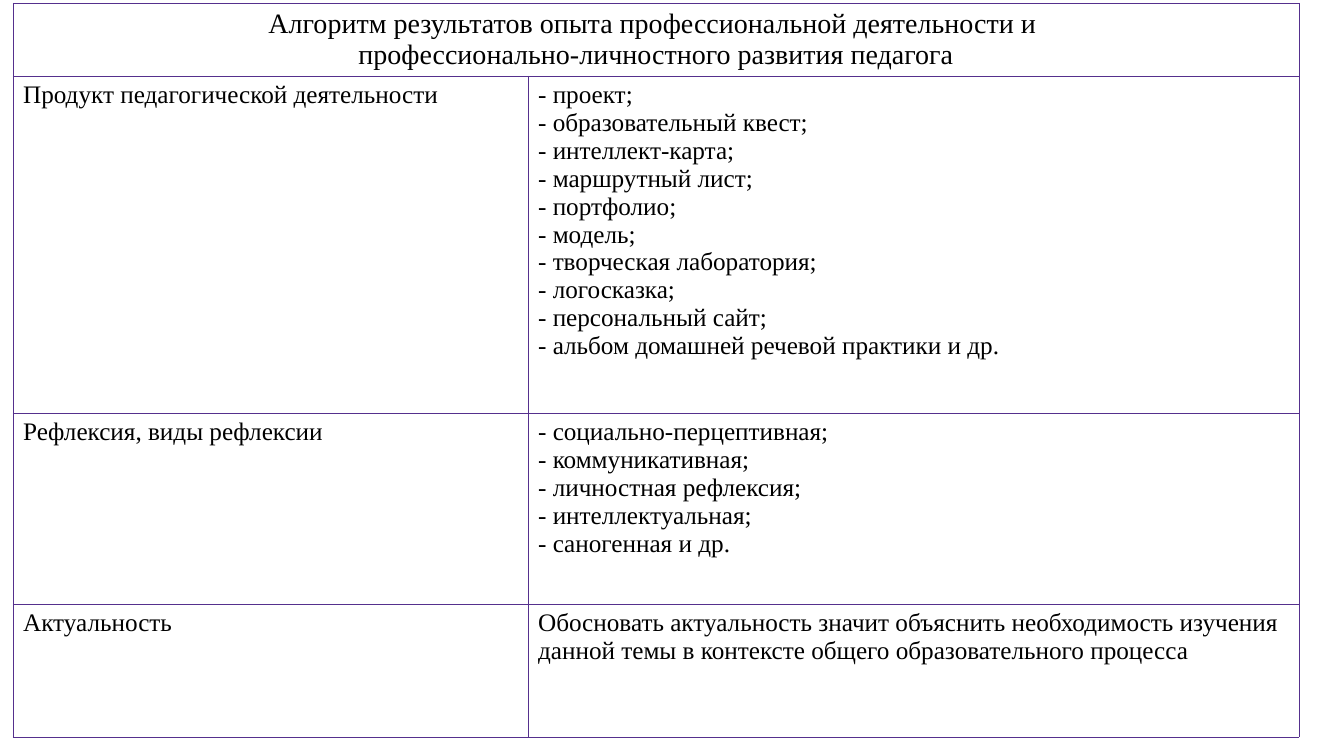
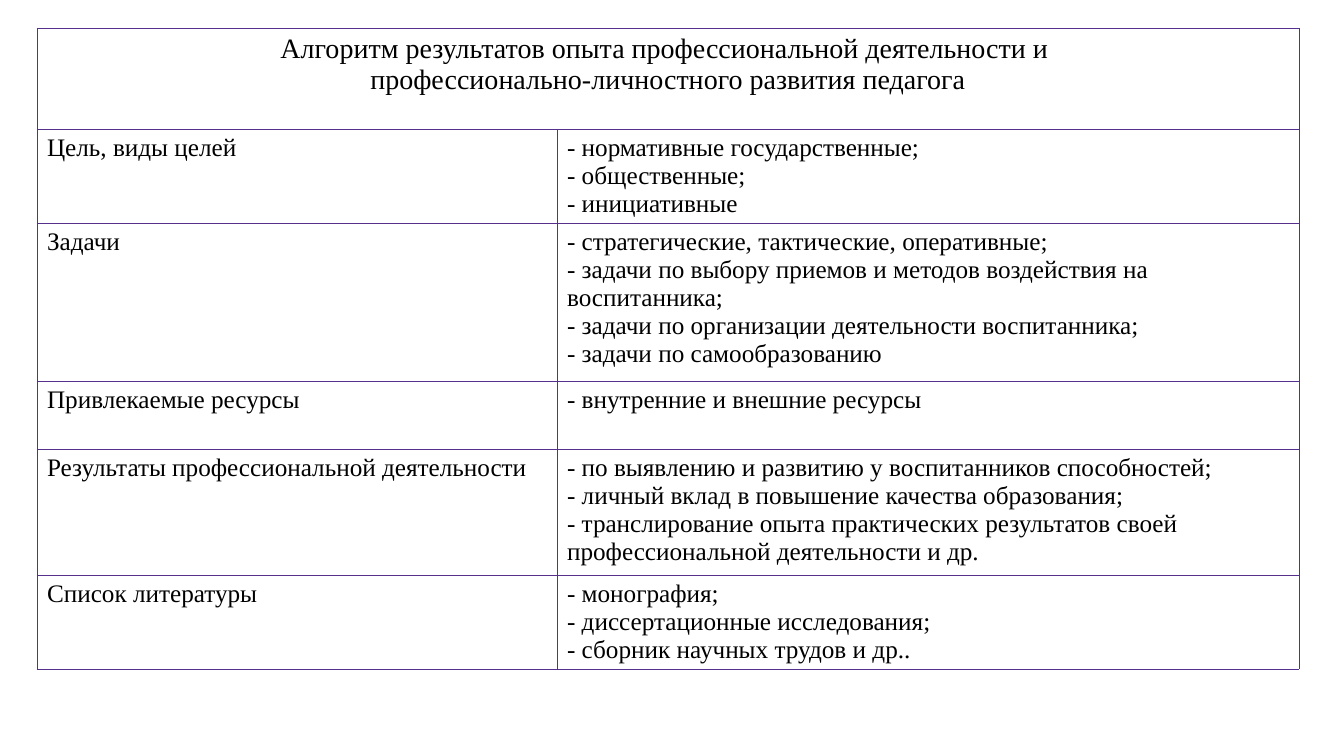
from lxml.etree import SubElement
from pptx import Presentation
from pptx.dml.color import RGBColor
from pptx.enum.text import PP_ALIGN
from pptx.oxml.ns import qn
from pptx.util import Emu, Pt

# Shared style
BLACK = RGBColor(0x00, 0x00, 0x00)
WHITE = RGBColor(0xFF, 0xFF, 0xFF)
PURPLE = RGBColor(0x55, 0x30, 0x8D)
FONT = "Times New Roman"
HEAD_SIZE, BODY_SIZE = Pt(20), Pt(18)
EDGE = Pt(0.06)
SCALE = 914400 / 100.8

# Content: each row is (height, label, lines)
HEAD = [
    "Алгоритм результатов опыта профессиональной деятельности и ",
    "профессионально-личностного развития педагога",
]
PAGES = [
    {
        "at": (13, 3), "cols": (515, 771), "head": 73,
        "rows": [
            (337, "Продукт педагогической деятельности", [
                "- проект;",
                "- образовательный квест;",
                "- интеллект-карта;",
                "- маршрутный лист;",
                "- портфолио;",
                "- модель;",
                "- творческая лаборатория;",
                "- логосказка;",
                "- персональный сайт;",
                "- альбом домашней речевой практики и др.",
            ]),
            (191, "Рефлексия, виды рефлексии", [
                "- социально-перцептивная;",
                "- коммуникативная;",
                "- личностная рефлексия;",
                "- интеллектуальная;",
                "- саногенная и др.",
            ]),
            (133, "Актуальность", [
                "Обосновать актуальность значит объяснить необходимость изучения "
                "данной темы в контексте общего образовательного процесса",
            ]),
        ],
    },
    {
        "at": (37, 28), "cols": (520, 742), "head": 101,
        "rows": [
            (94, "Цель, виды целей", [
                "- нормативные государственные;",
                "- общественные;",
                "- инициативные",
            ]),
            (158, "Задачи", [
                "- стратегические, тактические, оперативные;",
                "- задачи по выбору приемов и методов воздействия на воспитанника;",
                "- задачи по организации деятельности воспитанника;",
                "- задачи по самообразованию",
            ]),
            (68, "Привлекаемые ресурсы", ["- внутренние и внешние ресурсы"]),
            (126, "Результаты профессиональной деятельности", [
                "- по выявлению и развитию у воспитанников способностей;",
                "- личный вклад в повышение качества образования;",
                "- транслирование опыта практических результатов своей "
                "профессиональной деятельности и др.",
            ]),
            (94, "Список литературы", [
                "- монография;",
                "- диссертационные исследования;",
                "- сборник научных трудов и др..",
            ]),
        ],
    },
]


def px(n):
    return Emu(round(n * SCALE))


def frame(cell):
    """Draw the four cell borders; they must precede the fill in the XML."""
    props = cell._tc.get_or_add_tcPr()
    for side in ("lnL", "lnR", "lnT", "lnB"):
        line = SubElement(props, qn(f"a:{side}"), w=str(int(EDGE)))
        fill = SubElement(line, qn("a:solidFill"))
        SubElement(fill, qn("a:srgbClr"), val=str(PURPLE))


def write(cell, lines, size, align):
    cell.text_frame.text = "\n".join(lines)
    for para in cell.text_frame.paragraphs:
        para.alignment = align
        for run in para.runs:
            run.font.name = FONT
            run.font.size = size
            run.font.color.rgb = BLACK


def build(slide, page):
    rows, cols = page["rows"], page["cols"]
    highs = [page["head"]] + [row[0] for row in rows]
    spot = [px(n) for n in (*page["at"], sum(cols), sum(highs))]
    table = slide.shapes.add_table(len(highs), len(cols), *spot).table
    table.first_row = table.horz_banding = False

    # Grid
    for col, wide in zip(table.columns, cols):
        col.width = px(wide)
    for row, high in zip(table.rows, highs):
        row.height = px(high)
    for cell in table.iter_cells():
        frame(cell)
        cell.fill.solid()
        cell.fill.fore_color.rgb = WHITE

    # Heading across both columns, then the rows
    table.cell(0, 0).merge(table.cell(0, 1))
    write(table.cell(0, 0), HEAD, HEAD_SIZE, PP_ALIGN.CENTER)
    for i, (_, label, lines) in enumerate(rows, 1):
        write(table.cell(i, 0), [label], BODY_SIZE, PP_ALIGN.LEFT)
        write(table.cell(i, 1), lines, BODY_SIZE, PP_ALIGN.LEFT)


def main():
    deck = Presentation()
    deck.slide_width, deck.slide_height = px(1344), px(756)
    for page in PAGES:
        build(deck.slides.add_slide(deck.slide_layouts[6]), page)
    deck.save("out.pptx")


if __name__ == "__main__":
    main()
